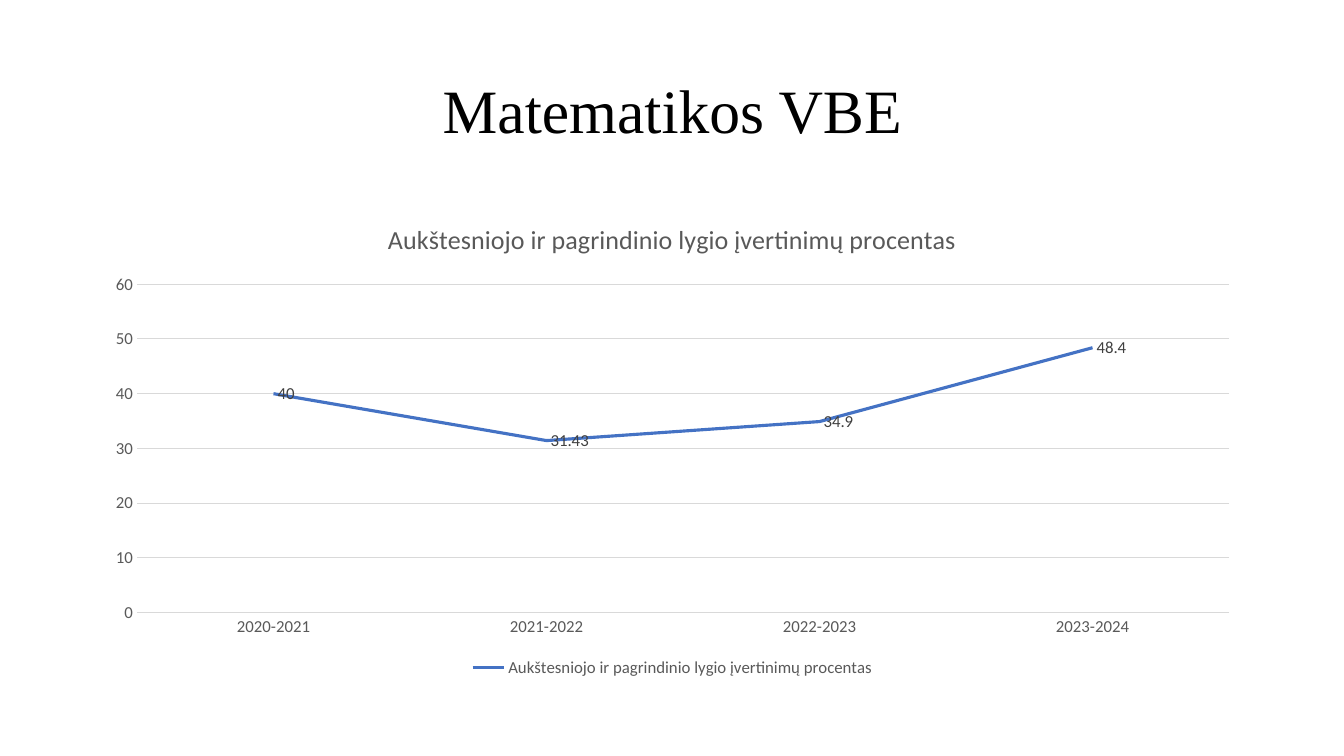
from dataclasses import dataclass

from pptx import Presentation
from pptx.chart.data import CategoryChartData
from pptx.dml.color import RGBColor
from pptx.enum.chart import (XL_CHART_TYPE, XL_LABEL_POSITION,
                             XL_LEGEND_POSITION, XL_MARKER_STYLE, XL_TICK_MARK)
from pptx.enum.text import MSO_ANCHOR, MSO_AUTO_SIZE, PP_ALIGN
from pptx.chart.chart import Chart
from pptx.dml.line import LineFormat
from pptx.slide import Slide
from pptx.text.text import Font
from pptx.util import Emu, Pt

PX = 9144  # 100 px to the inch
COLORS = {"title": "000000", "text": "595959", "label": "404040",
          "grid": "D9D9D9", "line": "4472C4"}
SERIES = "Aukštesniojo ir pagrindinio lygio įvertinimų procentas"
RESULTS = {"2020-2021": 40, "2021-2022": 31.43,
           "2022-2023": 34.9, "2023-2024": 48.4}


@dataclass(frozen=True)
class Box:
    left: int
    top: int
    width: int
    height: int

    def emu(self) -> tuple[Emu, Emu, Emu, Emu]:
        return (Emu(self.left * PX), Emu(self.top * PX),
                Emu(self.width * PX), Emu(self.height * PX))


TITLE_BOX = Box(92, 40, 1150, 145)
CHART_BOX = Box(92, 200, 1150, 476)


def set_font(font: Font, size: float, color: str, name: str = "Calibri") -> None:
    font.size = Pt(size)
    font.name = name
    font.bold = False
    font.color.rgb = RGBColor.from_string(COLORS[color])


def set_line(line: LineFormat, color: str, width: float) -> None:
    line.color.rgb = RGBColor.from_string(COLORS[color])
    line.width = Pt(width)


def add_title(slide: Slide) -> None:
    title = slide.shapes.title
    title.left, title.top, title.width, title.height = TITLE_BOX.emu()
    frame = title.text_frame
    frame.text = "Matematikos VBE"
    frame.word_wrap = True
    frame.auto_size = MSO_AUTO_SIZE.NONE
    frame.vertical_anchor = MSO_ANCHOR.MIDDLE
    para = frame.paragraphs[0]
    para.alignment = PP_ALIGN.CENTER
    para.line_spacing = 0.9
    set_font(para.runs[0].font, 44, "title", "Times New Roman")


def style_axes(chart: Chart) -> None:
    for axis in (chart.category_axis, chart.value_axis):
        axis.major_tick_mark = XL_TICK_MARK.NONE
        axis.minor_tick_mark = XL_TICK_MARK.NONE
        set_font(axis.tick_labels.font, 12, "text")
    set_line(chart.category_axis.format.line, "grid", 0.75)
    scale = chart.value_axis
    scale.minimum_scale, scale.maximum_scale, scale.major_unit = 0, 60, 10
    scale.format.line.fill.background()
    set_line(scale.major_gridlines.format.line, "grid", 0.75)


def style_series(chart: Chart) -> None:
    plot = chart.plots[0]
    plot.vary_by_categories = False
    series = plot.series[0]
    series.smooth = False
    series.marker.style = XL_MARKER_STYLE.NONE
    set_line(series.format.line, "line", 2.25)
    labels = series.data_labels
    labels.show_value = True
    labels.position = XL_LABEL_POSITION.RIGHT
    set_font(labels.font, 12, "label")


def add_chart(slide: Slide) -> None:
    data = CategoryChartData()
    data.categories = list(RESULTS)
    data.add_series(SERIES, list(RESULTS.values()))
    chart = slide.shapes.add_chart(
        XL_CHART_TYPE.LINE, *CHART_BOX.emu(), data).chart
    set_font(chart.font, 10, "title")
    chart.has_title = True
    frame = chart.chart_title.text_frame
    frame.text = SERIES
    set_font(frame.paragraphs[0].runs[0].font, 18.6, "text")
    chart.chart_title.include_in_layout = False
    chart.has_legend = True
    chart.legend.position = XL_LEGEND_POSITION.BOTTOM
    chart.legend.include_in_layout = False
    set_font(chart.legend.font, 12, "text")
    style_axes(chart)
    style_series(chart)


def main() -> None:
    deck = Presentation()
    deck.slide_width, deck.slide_height = Emu(1333 * PX), Emu(750 * PX)
    slide = deck.slides.add_slide(deck.slide_layouts.get_by_name("Title Only"))
    add_title(slide)
    add_chart(slide)
    deck.save("out.pptx")


if __name__ == "__main__":
    main()
